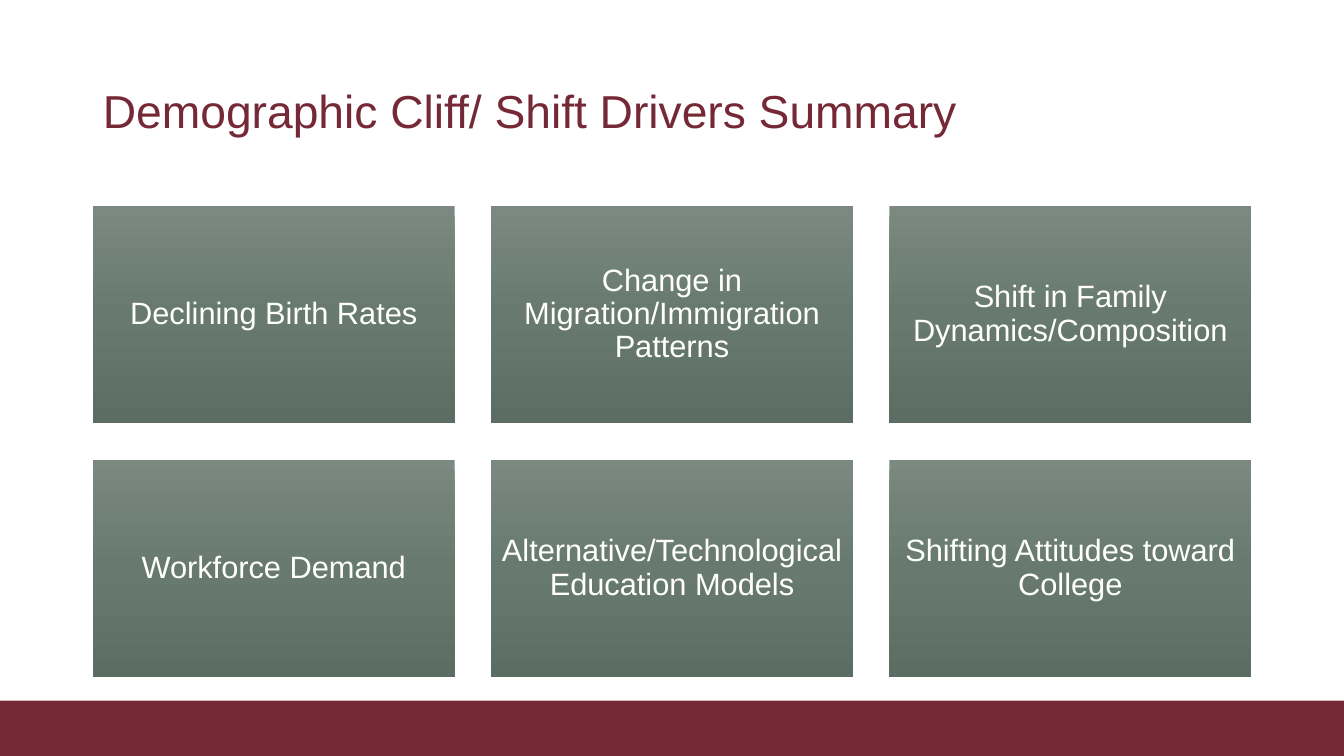
from copy import deepcopy
from dataclasses import dataclass

from pptx import Presentation
from pptx.dml.color import RGBColor
from pptx.enum.shapes import MSO_SHAPE
from pptx.enum.text import MSO_ANCHOR, MSO_AUTO_SIZE, PP_ALIGN
from pptx.oxml.ns import qn
from pptx.util import Inches, Pt


@dataclass(frozen=True)
class Theme:
    font: str = "Arial"
    maroon: RGBColor = RGBColor(0x75, 0x28, 0x36)
    white: RGBColor = RGBColor(0xFF, 0xFF, 0xFF)
    card_gradient: tuple = (
        (0, RGBColor(0x7B, 0x89, 0x81)),
        (0.5, RGBColor(0x68, 0x7A, 0x70)),
        (1, RGBColor(0x5C, 0x6D, 0x63)),
    )
    title_size: Pt = Pt(33)
    card_size: Pt = Pt(22)


THEME = Theme()
SLIDE_WIDTH, SLIDE_HEIGHT = 13.33, 7.5
MARGIN_LEFT = 0.92
BAND_TOP = 6.95

COLUMNS = 3
CARDS_TOP = 2.04
CARD_WIDTH, CARD_HEIGHT = 3.59, 2.16
CARD_GAP = 0.36
CARD_INSET = 0.09

DRIVERS = [
    "Declining Birth Rates",
    "Change in Migration/Immigration Patterns",
    "Shift in Family Dynamics/Composition",
    "Workforce Demand",
    "Alternative/Technological Education Models",
    "Shifting Attitudes toward College",
]


def add_box(slide, left, top, width, height):
    """Add a rectangle without outline or shadow."""
    box = slide.shapes.add_shape(
        MSO_SHAPE.RECTANGLE, Inches(left), Inches(top), Inches(width), Inches(height)
    )
    box.shadow.inherit = False
    box.line.fill.background()
    return box


def fill_downward(box, gradient):
    """Fill the box from top to bottom with three colour stops."""
    fill = box.fill
    fill.gradient()
    fill.gradient_angle = 270
    stop_list = box._element.spPr.find(qn("a:gradFill")).find(qn("a:gsLst"))
    stop_list.insert(1, deepcopy(stop_list[0]))
    for stop, (position, color) in zip(fill.gradient_stops, gradient):
        stop.position = position
        stop.color.rgb = color


def style_paragraph(paragraph, size, color, alignment):
    paragraph.alignment = alignment
    paragraph.line_spacing = 0.9
    paragraph.font.name = THEME.font
    paragraph.font.size = size
    paragraph.font.color.rgb = color


def add_footer_band(slide):
    band = add_box(slide, 0, BAND_TOP, SLIDE_WIDTH, SLIDE_HEIGHT - BAND_TOP)
    band.fill.solid()
    band.fill.fore_color.rgb = THEME.maroon


def set_title(slide, text):
    title = slide.shapes.title
    title.left, title.top = Inches(MARGIN_LEFT), Inches(0.4)
    title.width, title.height = Inches(11.5), Inches(1.45)
    frame = title.text_frame
    frame.text = text
    frame.auto_size = MSO_AUTO_SIZE.NONE
    frame.vertical_anchor = MSO_ANCHOR.MIDDLE
    style_paragraph(frame.paragraphs[0], THEME.title_size, THEME.maroon, PP_ALIGN.LEFT)


def add_driver_card(slide, left, top, text):
    card = add_box(slide, left, top, CARD_WIDTH, CARD_HEIGHT)
    fill_downward(card, THEME.card_gradient)
    frame = card.text_frame
    frame.text = text
    frame.word_wrap = True
    frame.vertical_anchor = MSO_ANCHOR.MIDDLE
    frame.margin_left = frame.margin_right = Inches(CARD_INSET)
    frame.margin_top = frame.margin_bottom = Inches(CARD_INSET)
    style_paragraph(frame.paragraphs[0], THEME.card_size, THEME.white, PP_ALIGN.CENTER)


def main():
    deck = Presentation()
    deck.slide_width, deck.slide_height = Inches(SLIDE_WIDTH), Inches(SLIDE_HEIGHT)
    title_only = deck.slide_layouts[5]
    slide = deck.slides.add_slide(title_only)

    add_footer_band(slide)
    set_title(slide, "Demographic Cliff/ Shift Drivers Summary")
    for index, driver in enumerate(DRIVERS):
        row, column = divmod(index, COLUMNS)
        left = MARGIN_LEFT + column * (CARD_WIDTH + CARD_GAP)
        top = CARDS_TOP + row * (CARD_HEIGHT + CARD_GAP)
        add_driver_card(slide, left, top, driver)

    deck.save("out.pptx")


if __name__ == "__main__":
    main()
